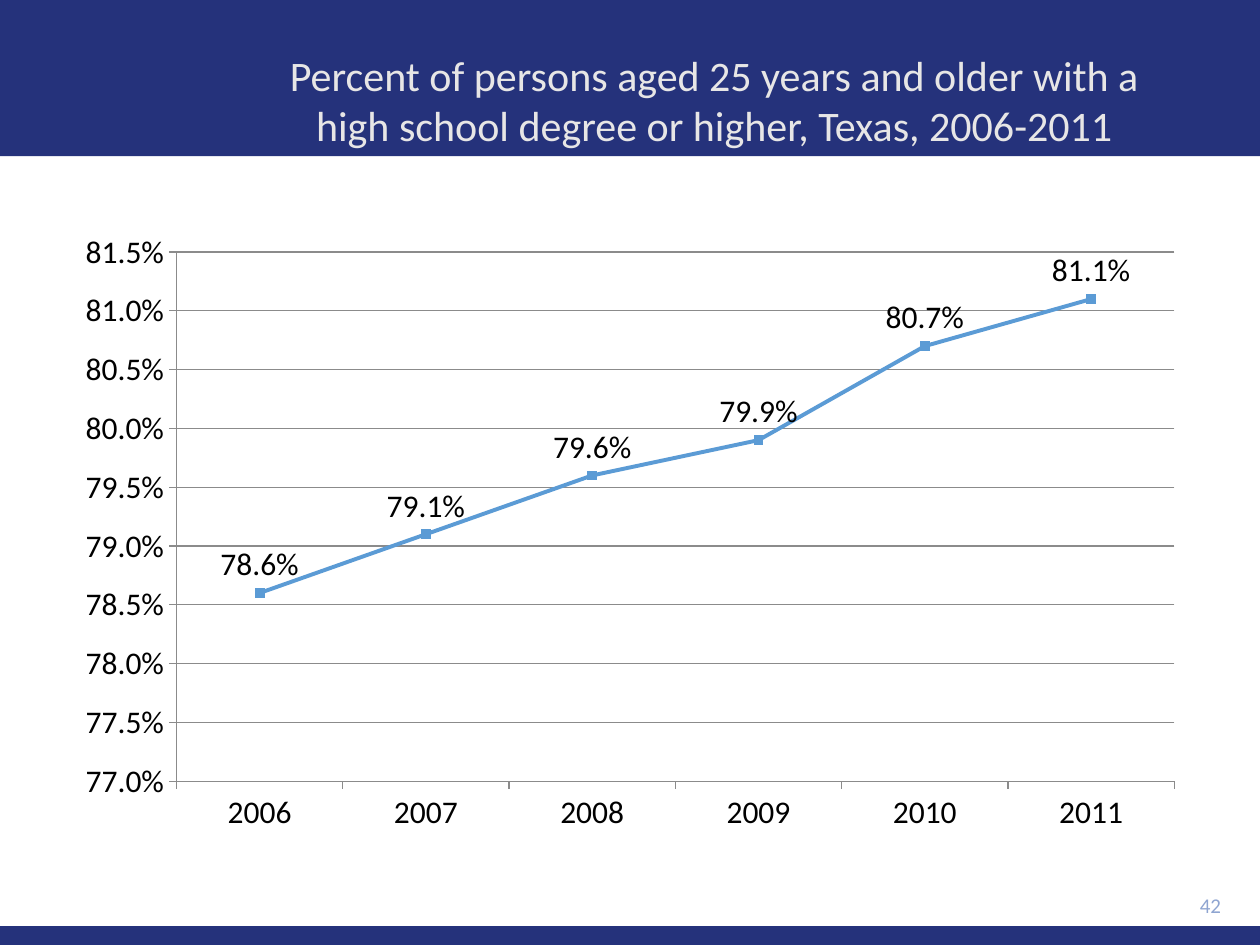
from lxml import etree
from pptx import Presentation
from pptx.chart.data import CategoryChartData
from pptx.dml.color import RGBColor
from pptx.enum.chart import XL_CHART_TYPE, XL_LABEL_POSITION, XL_MARKER_STYLE, XL_TICK_MARK
from pptx.enum.shapes import MSO_SHAPE
from pptx.enum.text import MSO_ANCHOR, MSO_AUTO_SIZE, PP_ALIGN
from pptx.util import Inches, Pt

RECTANGLE = MSO_SHAPE.RECTANGLE
LINE_MARKERS = XL_CHART_TYPE.LINE_MARKERS
SQUARE = XL_MARKER_STYLE.SQUARE
ABOVE = XL_LABEL_POSITION.ABOVE
TICK_OUTSIDE = XL_TICK_MARK.OUTSIDE
TICK_NONE = XL_TICK_MARK.NONE
MIDDLE = MSO_ANCHOR.MIDDLE
NO_FIT = MSO_AUTO_SIZE.NONE
CENTER, RIGHT = PP_ALIGN.CENTER, PP_ALIGN.RIGHT

WIDTH, HEIGHT = 10, 7.5
FONT = "Calibri"
NAVY, PALE_BLUE, PALE_GRAY = "25327B", "8FA5D1", "E7E6E6"
LINE_BLUE, AXIS_GRAY, BLACK = "5B9BD5", "8B8B8B", "000000"

TITLE = "Percent of persons aged 25 years and older with a high school degree or higher, Texas, 2006-2011"
YEARS = [str(year) for year in range(2006, 2012)]
RATES = [0.786, 0.791, 0.796, 0.799, 0.807, 0.811]


def color(value):
    return RGBColor.from_string(value)


def place(left, top, width, height):
    return [Inches(length) for length in (left, top, width, height)]


def set_font(font, size, value):
    font.name = FONT
    font.size = Pt(size)
    font.bold = False
    font.color.rgb = color(value)


def write_text(box, text, size, value, align):
    frame = box.text_frame
    frame.text = text
    frame.word_wrap = True
    frame.auto_size = NO_FIT
    frame.vertical_anchor = MIDDLE
    para = frame.paragraphs[0]
    para.alignment = align
    set_font(para.runs[0].font, size, value)


def add_band(page, top, height):
    band = page.shapes.add_shape(RECTANGLE, *place(0, top, WIDTH, height))
    band.shadow.inherit = False
    band.fill.solid()
    band.fill.fore_color.rgb = color(NAVY)
    band.line.fill.background()


def add_title(page, text):
    title = page.shapes.title
    title.left, title.top, title.width, title.height = place(1.92, 0.25, 7.5, 1.08)
    write_text(title, text, size=24, value=PALE_GRAY, align=CENTER)
    title.element.getparent().append(title.element)


def add_page_number(page, number):
    box = page.shapes.add_textbox(*place(8.9, 7.01, 0.89, 0.34))
    write_text(box, number, size=12, value=PALE_BLUE, align=RIGHT)


def style_line(line, value, width):
    line.color.rgb = color(value)
    line.width = Pt(width)


def style_axis(axis):
    axis.major_tick_mark = TICK_OUTSIDE
    axis.minor_tick_mark = TICK_NONE
    style_line(axis.format.line, AXIS_GRAY, 0.75)
    set_font(axis.tick_labels.font, 18, BLACK)


def style_series(series):
    series.smooth = False
    style_line(series.format.line, LINE_BLUE, 2.25)
    series.marker.style = SQUARE
    series.marker.size = 5
    series.marker.format.fill.solid()
    series.marker.format.fill.fore_color.rgb = color(LINE_BLUE)
    style_line(series.marker.format.line, LINE_BLUE, 0.75)
    labels = series.data_labels
    labels.show_value = True
    labels.position = ABOVE
    labels.number_format = "0.0%"
    labels.number_format_is_linked = False
    set_font(labels.font, 18, BLACK)


def add_rate_chart(page):
    data = CategoryChartData(number_format="0.0%")
    data.categories = YEARS
    data.add_series("Series 1", RATES)
    chart = page.shapes.add_chart(LINE_MARKERS, *place(0.5, 1.75, 9, 4.95), data).chart
    chart.has_legend = False
    chart.has_title = False
    set_font(chart.font, 18, BLACK)
    chart.plots[0].vary_by_categories = False
    style_axis(chart.category_axis)
    rate_axis = chart.value_axis
    style_axis(rate_axis)
    rate_axis.minimum_scale, rate_axis.maximum_scale = 0.77, 0.815
    rate_axis.major_unit = 0.005
    rate_axis.tick_labels.number_format = "0.0%"
    rate_axis.tick_labels.number_format_is_linked = False
    rate_axis.has_major_gridlines = True
    style_line(rate_axis.major_gridlines.format.line, AXIS_GRAY, 0.75)
    style_series(chart.plots[0].series[0])


def main():
    deck = Presentation()
    deck.slide_width, deck.slide_height = Inches(WIDTH), Inches(HEIGHT)
    page = deck.slides.add_slide(deck.slide_layouts[5])
    add_band(page, top=0, height=1.24)
    add_band(page, top=HEIGHT - 0.15, height=0.15)
    add_page_number(page, "42")
    add_rate_chart(page)
    add_title(page, TITLE)
    deck.save("out.pptx")


if __name__ == "__main__":
    main()
